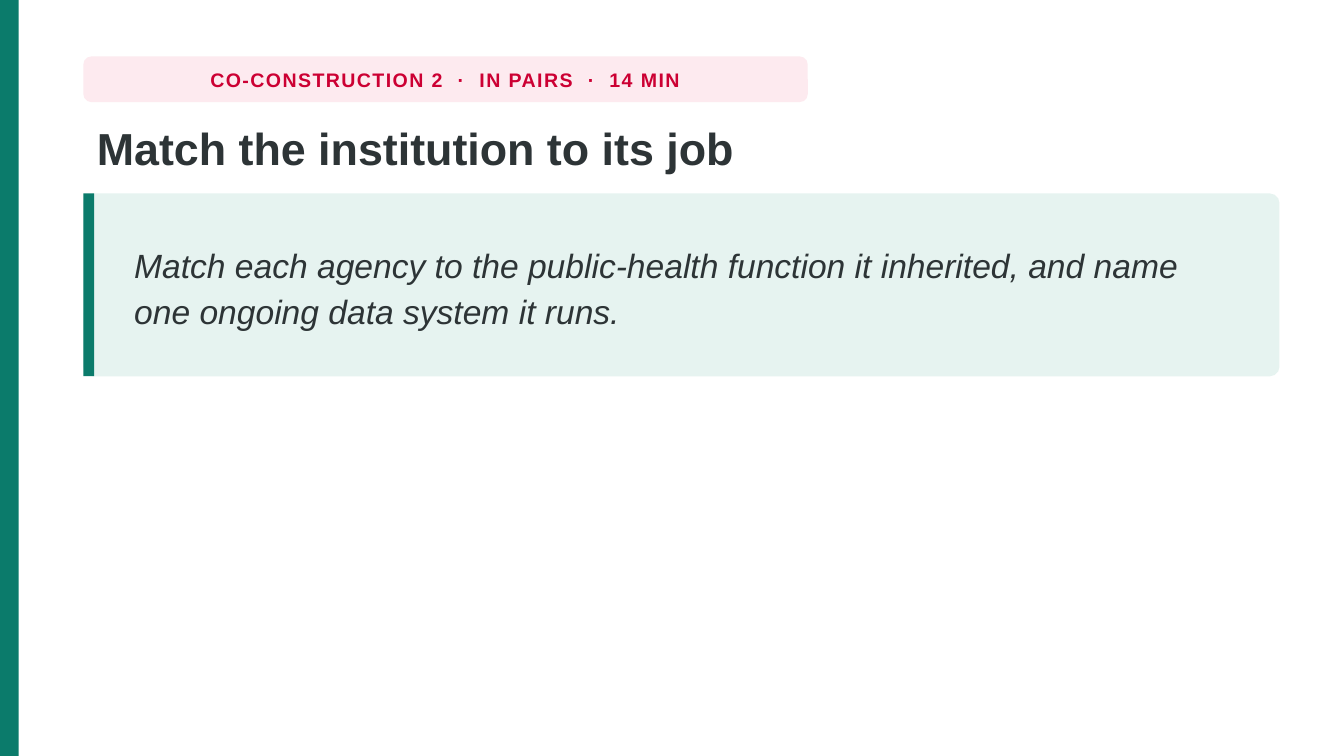
from dataclasses import dataclass

from pptx import Presentation
from pptx import util as u
from pptx.dml.color import RGBColor
from pptx.enum import shapes, text

WIDTH = 10
HEIGHT = WIDTH * 9 / 16
LEFT, CONTENT_WIDTH = 0.62, 8.9
TEAL, MINT, PINK, RED, INK = "0B7B6B", "E6F3F0", "FDEAEF", "CC0033", "2D3436"


@dataclass(frozen=True)
class Area:
    left: float
    top: float
    width: float
    height: float

    def lengths(self) -> list:
        return [u.Inches(n) for n in (self.left, self.top, self.width, self.height)]


@dataclass(frozen=True)
class Panel:
    area: Area
    fill: str
    radius: float = 0


@dataclass(frozen=True)
class Style:
    size: float
    color: str
    bold: bool = False
    italic: bool = False
    line_spacing: float = 1.0
    tracking: float = 0
    align: text.PP_ALIGN = text.PP_ALIGN.LEFT
    anchor: text.MSO_ANCHOR = text.MSO_ANCHOR.MIDDLE
    wrap: bool = True


def rgb(color: str) -> RGBColor:
    return RGBColor.from_string(color)


def draw_panel(page, panel: Panel) -> None:
    kinds = shapes.MSO_SHAPE
    kind = kinds.ROUNDED_RECTANGLE if panel.radius else kinds.RECTANGLE
    shape = page.shapes.add_shape(kind, *panel.area.lengths())
    if panel.radius:
        shape.adjustments[0] = panel.radius / min(panel.area.width, panel.area.height)
    shape.shadow.inherit = False
    shape.fill.solid()
    shape.fill.fore_color.rgb = rgb(panel.fill)
    shape.line.fill.background()


def write(box, words: str, style: Style) -> None:
    frame = box.text_frame
    frame.word_wrap = style.wrap
    frame.auto_size = text.MSO_AUTO_SIZE.NONE
    frame.vertical_anchor = style.anchor
    para = frame.paragraphs[0]
    para.alignment = style.align
    para.line_spacing = style.line_spacing
    span = para.add_run()
    span.text = words
    font = span.font
    font.name, font.size = "Arial", u.Pt(style.size)
    font.bold, font.italic = style.bold, style.italic
    font.color.rgb = rgb(style.color)
    if style.tracking:
        font._element.set("spc", str(round(style.tracking * 100)))


def main() -> None:
    deck = Presentation()
    deck.slide_width, deck.slide_height = u.Inches(WIDTH), u.Inches(HEIGHT)
    page = deck.slides.add_slide(deck.slide_layouts.get_by_name("Title Only"))

    tag = Area(LEFT, 0.42, 5.39, 0.34)
    heading = Area(LEFT, 0.84, CONTENT_WIDTH, 0.56)
    task = Area(LEFT, 1.44, CONTENT_WIDTH, 1.36)
    task_text = Area(LEFT + 0.28, task.top + 0.05, 8.35, task.height - 0.1)

    panels = [
        Panel(Area(0, 0, 0.14, HEIGHT), TEAL),
        Panel(tag, PINK, radius=0.06),
        Panel(task, MINT, radius=0.07),
        Panel(Area(LEFT, task.top, 0.08, task.height), TEAL),
    ]
    for panel in panels:
        draw_panel(page, panel)

    title = page.shapes.title
    title.left, title.top, title.width, title.height = heading.lengths()
    write(title, "Match the institution to its job",
          Style(24, INK, bold=True, line_spacing=1.02, anchor=text.MSO_ANCHOR.TOP))
    write(page.shapes.add_textbox(*tag.lengths()),
          "CO-CONSTRUCTION 2  ·  IN PAIRS  ·  14 MIN",
          Style(10.5, RED, bold=True, tracking=0.8,
                align=text.PP_ALIGN.CENTER, wrap=False))
    write(page.shapes.add_textbox(*task_text.lengths()),
          "Match each agency to the public-health function it inherited, "
          "and name one ongoing data system it runs.",
          Style(18, INK, italic=True, line_spacing=1.16))

    deck.save("out.pptx")


if __name__ == "__main__":
    main()
